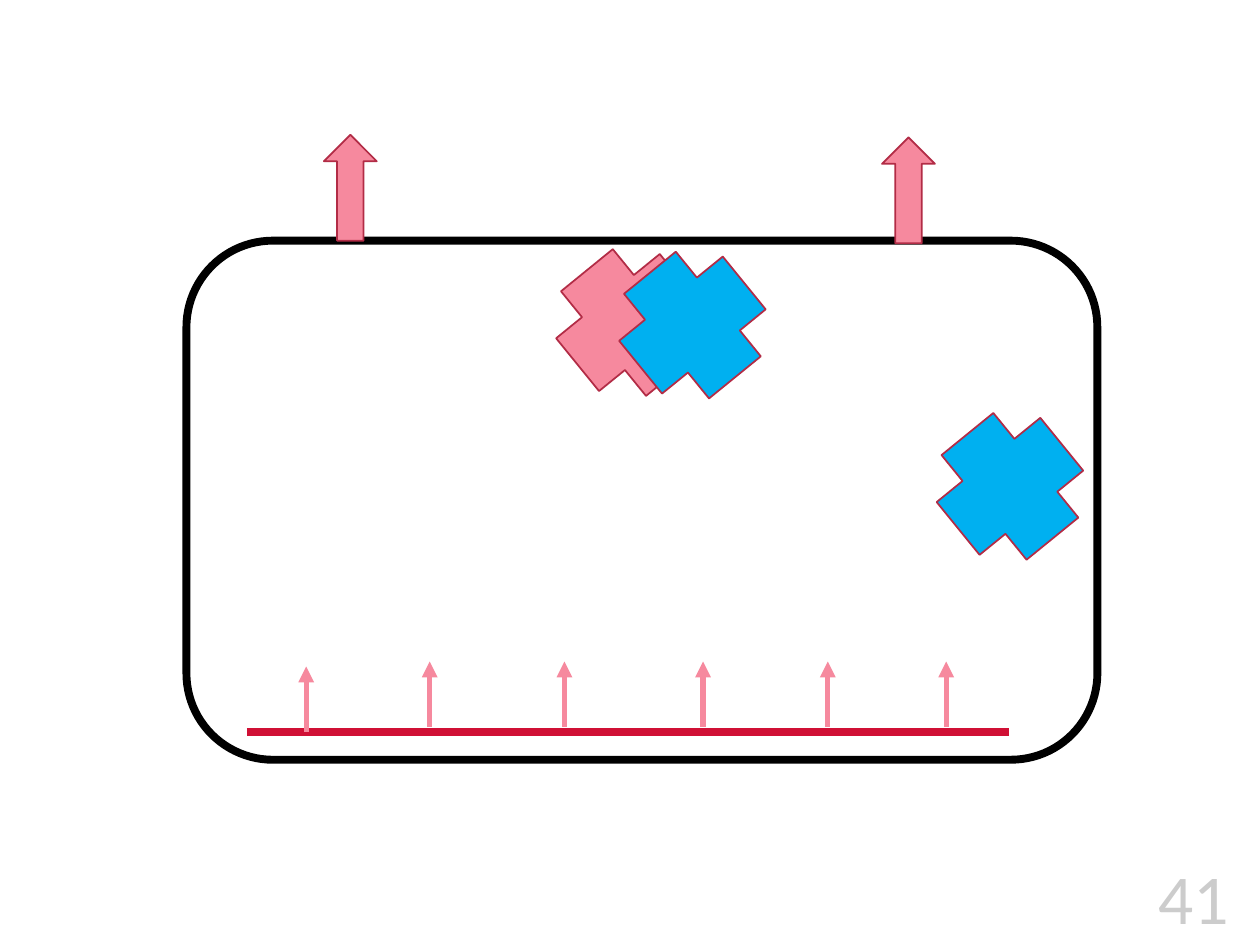
from dataclasses import dataclass

from lxml import etree
from pptx import Presentation
from pptx.dml.color import RGBColor
from pptx.enum.shapes import MSO_CONNECTOR, MSO_SHAPE
from pptx.enum.text import MSO_ANCHOR, PP_ALIGN
from pptx.oxml.ns import qn
from pptx.util import Inches, Pt

ROUNDED = MSO_SHAPE.ROUNDED_RECTANGLE
ARROW = MSO_SHAPE.DOWN_ARROW
CROSS = MSO_SHAPE.CROSS
STRAIGHT = MSO_CONNECTOR.STRAIGHT
BOTTOM = MSO_ANCHOR.BOTTOM
RIGHT = PP_ALIGN.RIGHT


@dataclass(frozen=True)
class Theme:
    white: str = "FFFFFF"
    black: str = "000000"
    pink: str = "F6899E"
    blue: str = "00B0F0"
    outline: str = "B22C46"
    red: str = "D01035"
    font: str = "Calibri"
    number_size: int = 40
    number_alpha: int = 20  # percent
    thick: float = 4.5
    medium: float = 3
    thin: float = 1


THEME = Theme()


def color(value):
    return RGBColor.from_string(value)


def add_shape(page, kind, place, fill, line, weight, rotation=0):
    shape = page.shapes.add_shape(kind, *map(Inches, place))
    shape.shadow.inherit = False
    shape.rotation = rotation
    shape.fill.solid()
    shape.fill.fore_color.rgb = color(fill)
    shape.line.color.rgb = color(line)
    shape.line.width = Pt(weight)


def add_line(group, start, end, line, weight, arrow=False):
    connector = group.shapes.add_connector(STRAIGHT, *map(Inches, start + end))
    connector.line.color.rgb = color(line)
    connector.line.width = Pt(weight)
    if arrow:
        etree.SubElement(connector.line._get_or_add_ln(), qn("a:tailEnd"), type="triangle")
    etree.SubElement(connector._element.spPr, qn("a:effectLst"))


def add_page_number(page, text):
    box = page.shapes.add_textbox(Inches(7.45), Inches(5.97), Inches(2.4), Inches(1.53))
    frame = box.text_frame
    frame.word_wrap = True
    frame.vertical_anchor = BOTTOM
    para = frame.paragraphs[0]
    para.alignment = RIGHT
    span = para.add_run()
    span.text = text
    span.font.name = THEME.font
    span.font.size = Pt(THEME.number_size)
    span.font.color.rgb = color(THEME.black)
    # Transparency of the text colour
    tint = span.font._element.find(".//" + qn("a:srgbClr"))
    etree.SubElement(tint, qn("a:alpha"), val=str(THEME.number_alpha * 1000))


def add_heater(page):
    group = page.shapes.add_group_shape()
    add_line(group, (1.96, 5.81), (8.01, 5.81), THEME.red, THEME.thick)
    # The first arrow starts on the bar, the others just above it
    starts = [(2.43, 5.81)] + [(x, 5.77) for x in (3.41, 4.48, 5.58, 6.57, 7.51)]
    for x, y in starts:
        add_line(group, (x, y), (x, y - 0.52), THEME.pink, THEME.medium, arrow=True)


def main():
    deck = Presentation()
    deck.slide_width, deck.slide_height = Inches(10), Inches(7.5)
    page = deck.slides.add_slide(deck.slide_layouts[6])

    # Container
    add_shape(page, ROUNDED, (1.48, 1.91, 7.23, 4.12), THEME.white, THEME.black, THEME.thick)

    # Outgoing arrows
    for left, top in ((2.57, 1.07), (7, 1.09)):
        add_shape(page, ARROW, (left, top, 0.42, 0.84), THEME.pink, THEME.outline, THEME.thin, 180)

    # Crosses inside the container
    crosses = ((4.46, 2.03, THEME.pink), (7.48, 3.33, THEME.blue), (4.96, 2.05, THEME.blue))
    for left, top, fill in crosses:
        add_shape(page, CROSS, (left, top, 1.07, 1.06), fill, THEME.outline, THEME.thin, 50.9)

    add_page_number(page, "41")
    add_heater(page)
    deck.save("out.pptx")


if __name__ == "__main__":
    main()
